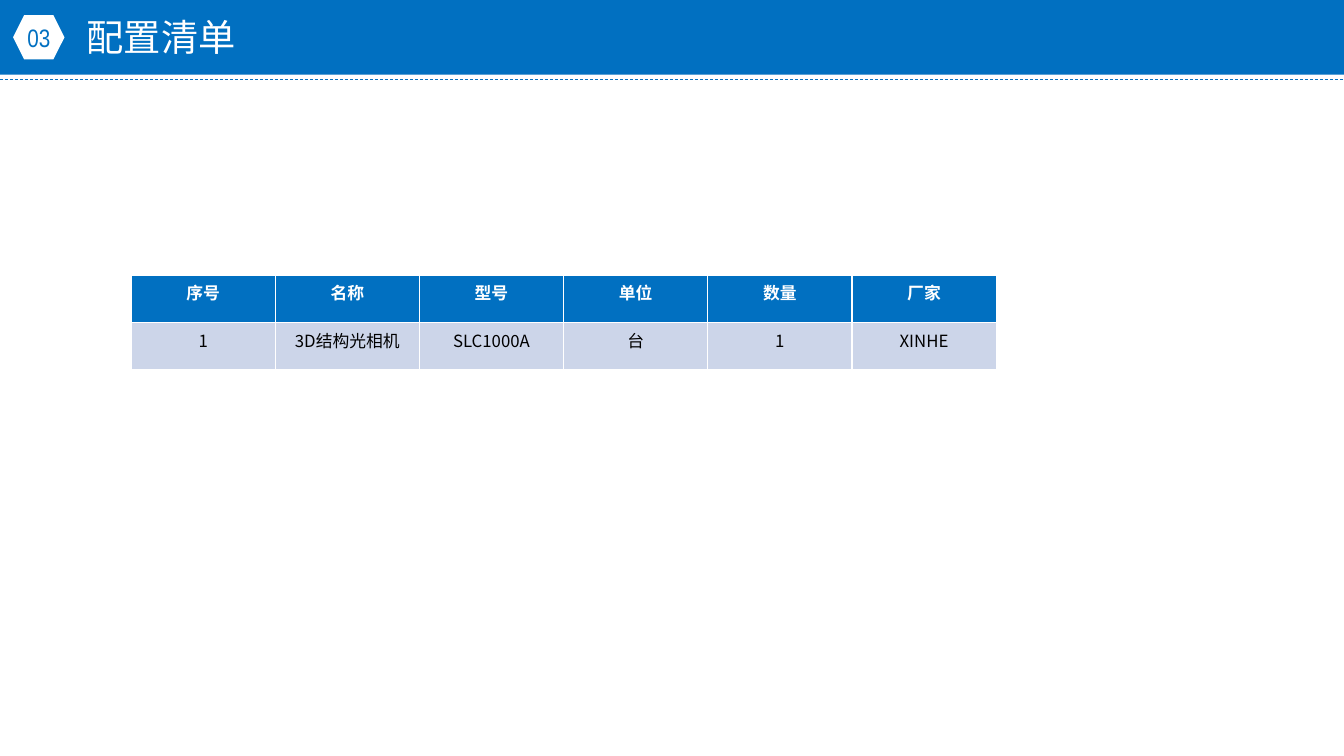
import pptx
import pptx.dml.color
import pptx.enum.dml
import pptx.enum.shapes
import pptx.enum.text
import pptx.oxml.ns
import pptx.util
from lxml import etree

Inches = pptx.util.Inches
Pt = pptx.util.Pt
qn = pptx.oxml.ns.qn
SHAPE = pptx.enum.shapes.MSO_SHAPE
ALIGN = pptx.enum.text.PP_ALIGN
ANCHOR = pptx.enum.text.MSO_ANCHOR
HUES = {"blue": "0170C1", "white": "FFFFFF", "pale": "CCD5E9", "black": "000000"}
ROWS = [
    ["序号", "名称", "型号", "单位", "数量", "厂家"],
    ["1", "3D结构光相机", "SLC1000A", "台", "1", "XINHE"],
]


def hue(name):
    """Return the colour of the given name."""
    return pptx.dml.color.RGBColor.from_string(HUES[name])


def write(frame, text, size=12, face="Noto Sans CJK SC", color="black",
          bold=False, align=ALIGN.CENTER):
    """Put one formatted line of text in a frame."""
    para = frame.paragraphs[0]
    para.alignment = align
    run = para.add_run()
    run.text = text
    font = run.font
    font.size, font.name, font.bold = Pt(size), face, bold
    font.color.rgb = hue(color)
    etree.SubElement(run._r.get_or_add_rPr(), qn("a:ea"), typeface=face)


class Deck:
    """Hold the style and the current slide."""

    def __init__(self):
        """Open a wide deck with one slide."""
        self.show = pptx.Presentation()
        self.show.slide_width = Inches(13.33)
        self.show.slide_height = Inches(7.5)
        self.slide = self.show.slides.add_slide(self.show.slide_layouts[5])

    def shape(self, kind, box, fill):
        """Add a plain filled shape."""
        item = self.slide.shapes.add_shape(kind, *map(Inches, box))
        item.shadow.inherit = False
        item.fill.solid()
        item.fill.fore_color.rgb = hue(fill)
        item.line.fill.background()
        return item

    def badge(self, text, box):
        """Add the numbered hexagon."""
        frame = self.shape(SHAPE.HEXAGON, box, "white").text_frame
        frame.margin_left = frame.margin_right = 0
        frame.margin_top = frame.margin_bottom = 0
        frame.vertical_anchor = ANCHOR.MIDDLE
        write(frame, text, size=18, face="Arial Narrow", color="blue")

    def rule(self, top):
        """Add a dashed line across the slide."""
        line = self.slide.shapes.add_connector(
            pptx.enum.shapes.MSO_CONNECTOR.STRAIGHT,
            0, Inches(top), self.show.slide_width, Inches(top))
        line.line.color.rgb = hue("blue")
        line.line.width = Pt(0.5)
        line.line.dash_style = pptx.enum.dml.MSO_LINE.DASH
        etree.SubElement(line.element.spPr, qn("a:effectLst"))

    def title(self, text, box):
        """Place the title in front of the band."""
        item = self.slide.shapes.title
        item.left, item.top, item.width, item.height = map(Inches, box)
        item.element.getparent().append(item.element)
        frame = item.text_frame
        frame.word_wrap = True
        frame.auto_size = pptx.enum.text.MSO_AUTO_SIZE.NONE
        frame.margin_right = 0
        frame.vertical_anchor = ANCHOR.TOP
        write(frame, text, size=26.6, color="white", align=ALIGN.LEFT)

    def edge(self, cell):
        """Give a cell thin white borders."""
        props = cell._tc.get_or_add_tcPr()
        for side in ("lnL", "lnR", "lnT", "lnB"):
            line = etree.SubElement(props, qn(f"a:{side}"), w=str(Pt(1)))
            paint = etree.SubElement(line, qn("a:solidFill"))
            etree.SubElement(paint, qn("a:srgbClr"), val=HUES["white"])

    def table(self, rows, box):
        """Add a table with a dark header row."""
        grid = self.slide.shapes.add_table(
            len(rows), len(rows[0]), *map(Inches, box)).table
        for r, row in enumerate(rows):
            head = r == 0
            for c, text in enumerate(row):
                cell = grid.cell(r, c)
                self.edge(cell)
                cell.fill.solid()
                cell.fill.fore_color.rgb = hue("blue" if head else "pale")
                write(cell.text_frame, text, bold=head,
                      color="white" if head else "black")


def main():
    """Build and save the slide."""
    deck = Deck()
    deck.shape(SHAPE.RECTANGLE, (0, 0, 13.33, 0.74), "blue")
    deck.rule(0.79)
    deck.badge("03", (0.13, 0.15, 0.51, 0.44))
    deck.title("配置清单", (0.76, 0.09, 1.8, 0.55))
    deck.table(ROWS, (1.3, 2.73, 8.58, 0.94))
    deck.show.save("out.pptx")


if __name__ == "__main__":
    main()
